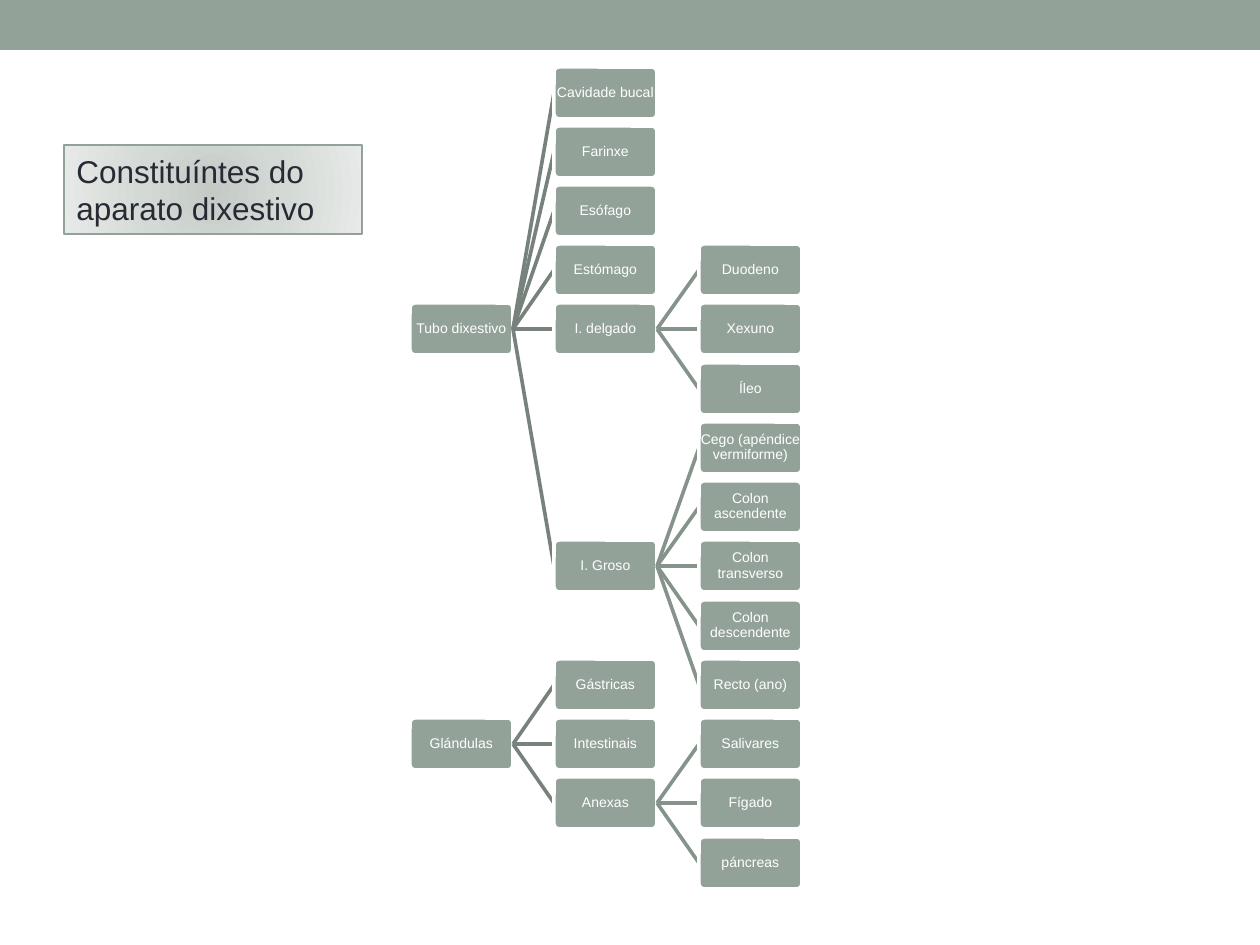
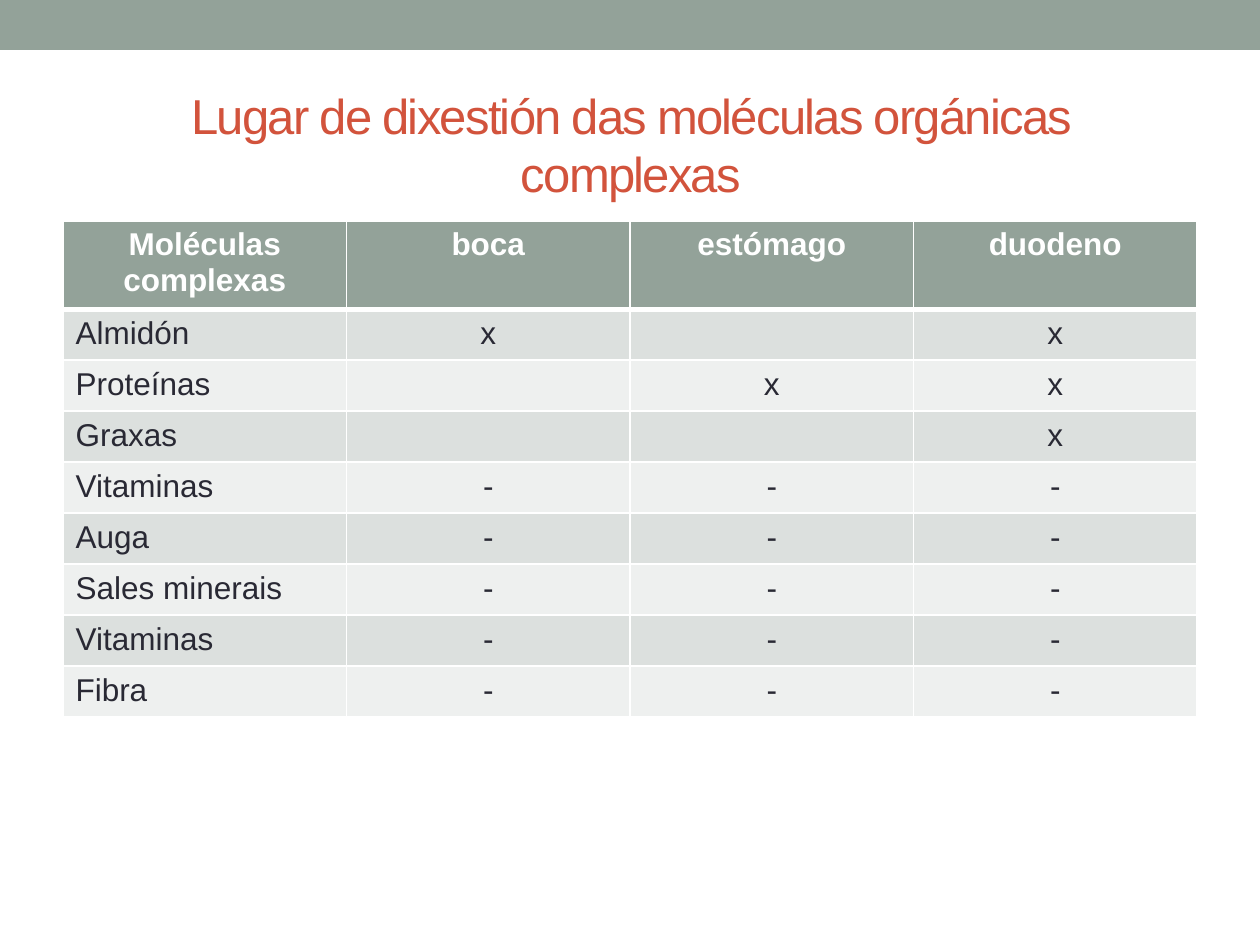
from lxml.etree import SubElement
from pptx import Presentation
from pptx.dml.color import RGBColor
from pptx.enum.shapes import MSO_CONNECTOR, MSO_SHAPE
from pptx.enum.text import MSO_ANCHOR, MSO_AUTO_SIZE, PP_ALIGN
from pptx.oxml.ns import qn
from pptx.util import Pt

SCALE = 914400 / 126
WIDE, HIGH = 1260, 945
FONT = "Arial"
COLORS = {
    "sage": "93A299", "white": "FFFFFF", "ink": "292934", "red": "D2533C",
    "odd": "DCE0DE", "even": "EEF0EF",
    "inner": "76827B", "outer": "85938B",
}
GLOW = [(0, "C4CAC6"), (45, "D3DAD6"), (100, "E7EAE8")]

# Each node: row, name, children
TREE = [
    (4, "Tubo dixestivo", [
        (0, "Cavidade bucal", []),
        (1, "Farinxe", []),
        (2, "Esófago", []),
        (3, "Estómago", []),
        (4, "I. delgado", [
            (3, "Duodeno", []), (4, "Xexuno", []), (5, "Íleo", [])]),
        (8, "I. Groso", [
            (6, "Cego (apéndice vermiforme)", []),
            (7, "Colon ascendente", []),
            (8, "Colon transverso", []),
            (9, "Colon descendente", []),
            (10, "Recto (ano)", [])]),
    ]),
    (11, "Glándulas", [
        (10, "Gástricas", []),
        (11, "Intestinais", []),
        (12, "Anexas", [
            (11, "Salivares", []), (12, "Fígado", []), (13, "páncreas", [])]),
    ]),
]
NODE_W, NODE_H = 103, 52

DIGEST = [
    ["Moléculas complexas", "boca", "estómago", "duodeno"],
    ["Almidón", "x", "", "x"],
    ["Proteínas", "", "x", "x"],
    ["Graxas", "", "", "x"],
] + [[name] + ["-"] * 3 for name in
     ["Vitaminas", "Auga", "Sales minerais", "Vitaminas", "Fibra"]]


def px(*sizes):
    return [round(size * SCALE) for size in sizes]


def tint(name):
    return RGBColor.from_string(COLORS[name])


class Deck:
    def __init__(self):
        self.prs = Presentation()
        self.prs.slide_width, self.prs.slide_height = px(WIDE, HIGH)
        self.slide = None

    def start(self):
        """Add a blank slide with the top band."""
        self.slide = self.prs.slides.add_slide(self.prs.slide_layouts[6])
        self.shape(MSO_SHAPE.RECTANGLE, (0, 0, WIDE, 50))

    def shape(self, kind, area, fill="sage", line=None, width=1):
        item = self.slide.shapes.add_shape(kind, *px(*area))
        item.shadow.inherit = False
        if fill:
            item.fill.solid()
            item.fill.fore_color.rgb = tint(fill)
        else:
            item.fill.background()
        if line:
            item.line.color.rgb = tint(line)
            item.line.width = Pt(width)
        else:
            item.line.fill.background()
        return item

    def text(self, frame, words, size, color, align=PP_ALIGN.LEFT, bold=False):
        frame.text = words
        frame.word_wrap = True
        para = frame.paragraphs[0]
        para.alignment = align
        for run in para.runs:
            font = run.font
            font.name, font.size, font.bold = FONT, Pt(size), bold
            font.color.rgb = tint(color)
        return para

    def title(self, words, area):
        frame = self.slide.shapes.add_textbox(*px(*area)).text_frame
        para = self.text(frame, words, 28, "red", PP_ALIGN.CENTER)
        frame.vertical_anchor = MSO_ANCHOR.MIDDLE
        para.runs[0].font._element.set("spc", "-100")

    def label(self, words, area):
        """Add a framed label with a radial gradient."""
        item = self.shape(MSO_SHAPE.RECTANGLE, area, None, "sage", 0.75)
        props = item._element.spPr
        blank = props.find(qn("a:noFill"))
        grad = SubElement(props, qn("a:gradFill"), rotWithShape="1")
        stops = SubElement(grad, qn("a:gsLst"))
        for pos, color in GLOW:
            stop = SubElement(stops, qn("a:gs"), pos=str(pos * 1000))
            SubElement(stop, qn("a:srgbClr"), val=color)
        focus = SubElement(grad, qn("a:path"), path="circle")
        SubElement(focus, qn("a:fillToRect"), dict.fromkeys("ltrb", "100000"))
        props.replace(blank, grad)
        self.text(item.text_frame, words, 18, "ink")
        item.text_frame.auto_size = MSO_AUTO_SIZE.SHAPE_TO_FIT_TEXT

    def link(self, ends, color):
        line = self.slide.shapes.add_connector(MSO_CONNECTOR.STRAIGHT, *px(*ends))
        line.line.color.rgb = tint(color)
        line.line.width = Pt(2.08)
        SubElement(line._element.spPr, qn("a:effectLst"))

    def node(self, words, left, top):
        item = self.shape(MSO_SHAPE.ROUNDED_RECTANGLE,
                          (left, top, NODE_W, NODE_H), "sage", "white", 2.08)
        item.adjustments[0] = 0.1
        frame = item.text_frame
        frame.margin_left = frame.margin_right = 0
        frame.margin_top = frame.margin_bottom = 0
        frame.vertical_anchor = MSO_ANCHOR.MIDDLE
        para = self.text(frame, words, 8, "white", PP_ALIGN.CENTER)
        para.line_spacing = 0.9

    def branch(self, node, depth=0):
        """Draw a node, then its links and children one column further."""
        row, name, kids = node
        left, top = spot(row, depth)
        self.node(name, left, top)
        for kid in kids:
            side, peak = spot(kid[0], depth + 1)
            self.link((left + NODE_W, top + NODE_H / 2, side, peak + NODE_H / 2),
                      "outer" if depth else "inner")
            self.branch(kid, depth + 1)

    def edge(self, cell, head):
        props = cell._tc.get_or_add_tcPr()
        for side in "LRTB":
            width = Pt(3 if head and side == "B" else 1)
            line = SubElement(props, qn(f"a:ln{side}"), w=str(int(width)))
            fill = SubElement(line, qn("a:solidFill"))
            SubElement(fill, qn("a:srgbClr"), val=COLORS["white"])

    def table(self, rows, area, head_h, row_h):
        table = self.slide.shapes.add_table(
            len(rows), len(rows[0]), *px(*area)).table
        for i, texts in enumerate(rows):
            head = i == 0
            table.rows[i].height = px(head_h if head else row_h)[0]
            shade = "sage" if head else "odd" if i % 2 else "even"
            for j, words in enumerate(texts):
                cell = table.cell(i, j)
                self.edge(cell, head)
                cell.fill.solid()
                cell.fill.fore_color.rgb = tint(shade)
                self.text(cell.text_frame, words, 18, "white" if head else "ink",
                          PP_ALIGN.CENTER if head or j else PP_ALIGN.LEFT, head)


def spot(row, depth):
    """Left and top of a node in the grid of the tree."""
    return 410 + depth * 289 // 2, 67 + row * 770 // 13


def main():
    deck = Deck()
    deck.start()
    for root in TREE:
        deck.branch(root)
    deck.label("Constituíntes do aparato dixestivo", (64, 145, 298, 89))

    deck.start()
    deck.title("Lugar de dixestión das moléculas orgánicas complexas",
               (64, 76, 1134, 136))
    deck.table(DIGEST, (63, 221, 1134, 490), 82, 51)
    deck.prs.save("out.pptx")


if __name__ == "__main__":
    main()
